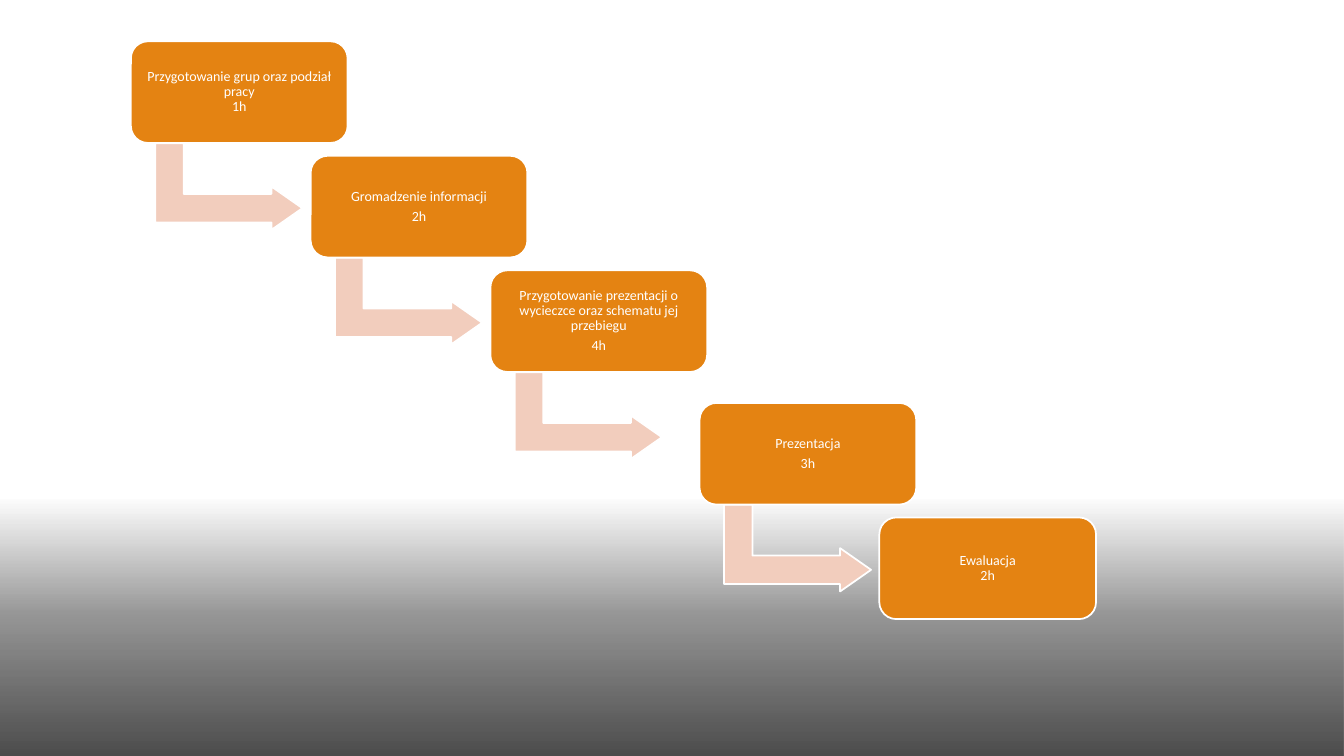
import pptx
import pptx.dml.color
import pptx.enum.shapes
import pptx.enum.text
import pptx.oxml
import pptx.oxml.ns
import pptx.util

Pt = pptx.util.Pt
SHAPES = pptx.enum.shapes.MSO_SHAPE

# Each stage is a list of paragraphs; a paragraph is a list of lines.
FLIGHTS = [
    {"start": (93.5, 29.5), "stages": [
        [["Przygotowanie grup oraz podział pracy", "1h"]],
        [["Gromadzenie informacji"], ["2h"]],
        [["Przygotowanie prezentacji o wycieczce oraz schematu jej przebiegu"], ["4h"]],
    ]},
    {"start": (499.7, 287.8), "stages": [
        [["Prezentacja"], ["3h"]],
        [["Ewaluacja", "2h"]],
    ]},
]
COLORS = {"box": "E48312", "arrow": "F2CDBD", "white": "FFFFFF", "shade": "000000"}
SHADE_STOPS = [(0, 0), (44, 40), (100, 70)]  # position and opacity, percent
FONT = "Calibri"

SLIDE_WIDTH, SLIDE_HEIGHT = 960, 540
SHADE_TOP = 356.4
STEP_X, STEP_Y = 128.4, 81.8
BOX_WIDTH, BOX_HEIGHT = 154.8, 72.6
ARROW_WIDTH, ARROW_HEIGHT = 61.9, 105.1
ARROW_OFFSET_X, ARROW_OFFSET_Y = 39, 51.2
ARROW_ADJUSTMENTS = (0.328, 0.25, 0.358)


def color(name):
    return pptx.dml.color.RGBColor.from_string(COLORS[name])


def add_outlined_shape(slide, kind, left, top, width, height, fill, adjustments):
    shape = slide.shapes.add_shape(kind, Pt(left), Pt(top), Pt(width), Pt(height))
    shape.shadow.inherit = False
    shape.fill.solid()
    shape.fill.fore_color.rgb = color(fill)
    shape.line.color.rgb = color("white")
    shape.line.width = Pt(1.25)
    for index, value in enumerate(adjustments):
        shape.adjustments[index] = value
    return shape


def add_shade(slide):
    """Darken the foot of the slide with a see-through vertical gradient."""
    shade = slide.shapes.add_shape(
        SHAPES.RECTANGLE, 0, Pt(SHADE_TOP), Pt(SLIDE_WIDTH), Pt(SLIDE_HEIGHT - SHADE_TOP))
    shade.shadow.inherit = False
    shade.line.fill.background()
    shade.fill.gradient()
    stops = "".join(
        f'<a:gs pos="{position * 1000}"><a:srgbClr val="{COLORS["shade"]}">'
        f'<a:alpha val="{opacity * 1000}"/></a:srgbClr></a:gs>'
        for position, opacity in SHADE_STOPS)
    gradient = pptx.oxml.parse_xml(
        f'<a:gradFill {pptx.oxml.ns.nsdecls("a")} rotWithShape="1"><a:gsLst>{stops}</a:gsLst>'
        '<a:lin ang="5400000" scaled="0"/></a:gradFill>')
    properties = shade.element.spPr
    properties.replace(properties.find(pptx.oxml.ns.qn("a:gradFill")), gradient)


def write_stage(box, paragraphs):
    frame = box.text_frame
    frame.word_wrap = True
    frame.vertical_anchor = pptx.enum.text.MSO_ANCHOR.MIDDLE
    frame.margin_left = frame.margin_right = Pt(8)
    frame.margin_top = frame.margin_bottom = Pt(6.5)
    for number, lines in enumerate(paragraphs):
        para = frame.add_paragraph() if number else frame.paragraphs[0]
        para.alignment = pptx.enum.text.PP_ALIGN.CENTER
        para.line_spacing = 0.9
        para.space_after = Pt(3.5)
        for line_number, line in enumerate(lines):
            if line_number:
                para.add_line_break()
            span = para.add_run()
            span.text = line
            span.font.name = FONT
            span.font.size = Pt(10)
            span.font.color.rgb = color("white")


def add_flight(slide, start, stages, is_last):
    """Draw stages as stairs; an arrow leaves every stage but the final one."""
    for index, paragraphs in enumerate(stages):
        left = start[0] + index * STEP_X
        top = start[1] + index * STEP_Y
        if not (is_last and index == len(stages) - 1):
            arrow = add_outlined_shape(
                slide, SHAPES.BENT_UP_ARROW, left + ARROW_OFFSET_X, top + ARROW_OFFSET_Y,
                ARROW_WIDTH, ARROW_HEIGHT, "arrow", ARROW_ADJUSTMENTS)
            arrow.rotation = 90
        box = add_outlined_shape(
            slide, SHAPES.ROUNDED_RECTANGLE, left, top, BOX_WIDTH, BOX_HEIGHT, "box", [0.167])
        write_stage(box, paragraphs)


def main():
    deck = pptx.Presentation()
    deck.slide_width, deck.slide_height = Pt(SLIDE_WIDTH), Pt(SLIDE_HEIGHT)
    page = deck.slides.add_slide(deck.slide_layouts[6])
    page.background.fill.solid()
    page.background.fill.fore_color.rgb = color("white")
    add_shade(page)
    for flight in FLIGHTS:
        add_flight(page, flight["start"], flight["stages"], flight is FLIGHTS[-1])
    deck.save("out.pptx")


if __name__ == "__main__":
    main()
